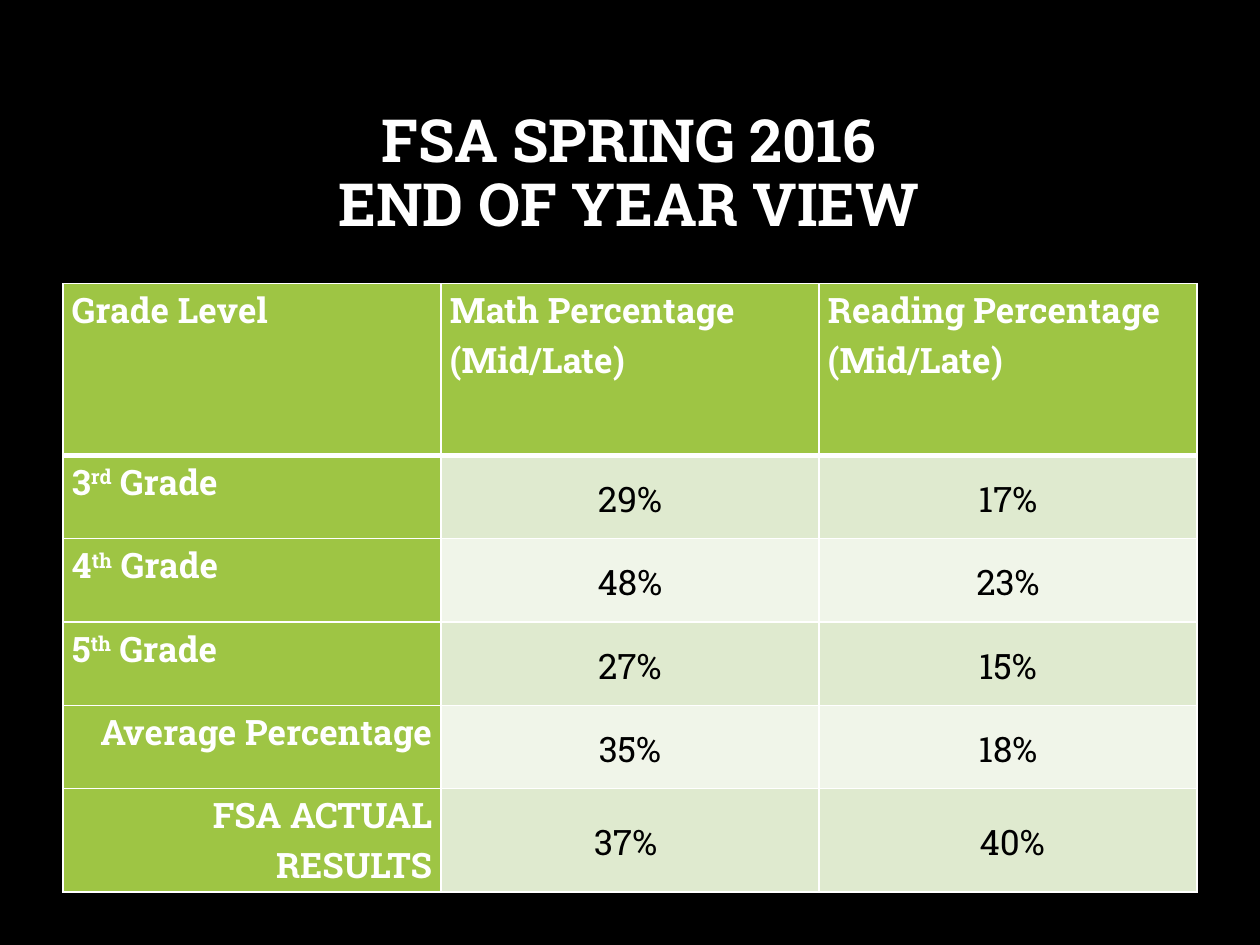
"""Build the FSA end of year results slide."""
from lxml.etree import SubElement
from pptx import Presentation
from pptx.dml.color import RGBColor
from pptx.enum.text import MSO_ANCHOR, MSO_AUTO_SIZE, PP_ALIGN
from pptx.oxml.ns import qn
from pptx.util import Cm, Pt

COLOURS = {
    "background": "000000",
    "label": "9EC544",
    "odd": "DFEACF",
    "even": "F0F5E9",
    "light": "FFFFFF",
    "dark": "000000",
}
FONT = "Roboto Slab"
TITLE_LINES = ["FSA SPRING 2016", "END OF YEAR VIEW"]
HEADERS = ["Grade Level", "Math Percentage (Mid/Late)", "Reading Percentage (Mid/Late)"]
RESULTS = [
    (["3", "rd", " Grade"], PP_ALIGN.LEFT, "29%", "17%"),
    (["4", "th", " Grade"], PP_ALIGN.LEFT, "48%", "23%"),
    (["5", "th", " Grade"], PP_ALIGN.LEFT, "27%", "15%"),
    (["Average Percentage"], PP_ALIGN.RIGHT, "35%", "18%"),
    (["FSA ACTUAL RESULTS"], PP_ALIGN.RIGHT, "37% ", " 40%"),
]
COLUMN_WIDTH = Cm(7.62)
ROW_HEIGHTS = [Cm(3.46)] + [Cm(1.68)] * 4 + [Cm(2.08)]


def colour(name):
    return RGBColor.from_string(COLOURS[name])


def apply(target, values):
    for name, value in values.items():
        setattr(target, name, value)


def add_span(para, text, size, ink, bold, raised=False):
    span = para.add_run()
    span.text = text
    apply(span.font, {"name": FONT, "size": Pt(size), "bold": bold})
    span.font.color.rgb = colour(ink)
    if raised:
        span._r.get_or_add_rPr().set("baseline", "30000")


def add_borders(cell, bottom):
    properties = cell._tc.get_or_add_tcPr()
    for side, width in {"lnL": 1, "lnR": 1, "lnT": 1, "lnB": bottom}.items():
        line = SubElement(properties, qn(f"a:{side}"), w=str(Pt(width)))
        fill = SubElement(line, qn("a:solidFill"))
        SubElement(fill, qn("a:srgbClr"), val=COLOURS["light"])


def fill_cell(cell, parts, fill, align=PP_ALIGN.LEFT, value=False, bottom=1):
    add_borders(cell, bottom)
    cell.fill.solid()
    cell.fill.fore_color.rgb = colour(fill)
    apply(cell, {
        "margin_left": Cm(0.18),
        "margin_right": Cm(0.18),
        "margin_top": 0,
        "margin_bottom": 0,
        "vertical_anchor": MSO_ANCHOR.MIDDLE if value else MSO_ANCHOR.TOP,
    })
    para = cell.text_frame.paragraphs[0]
    apply(para, {"alignment": align, "line_spacing": 1.07})
    for index, part in enumerate(parts):
        add_span(para, part, 20, "dark" if value else "light", not value, index == 1)


def add_title(page):
    box = page.shapes.title
    apply(box, {"left": Cm(1.9), "top": Cm(1.7), "width": Cm(21.56), "height": Cm(3.68)})
    apply(box.text_frame, {
        "word_wrap": True,
        "auto_size": MSO_AUTO_SIZE.NONE,
        "vertical_anchor": MSO_ANCHOR.MIDDLE,
    })
    para = box.text_frame.paragraphs[0]
    apply(para, {"alignment": PP_ALIGN.CENTER, "line_spacing": 0.9})
    for index, line in enumerate(TITLE_LINES):
        if index:
            para.add_line_break()
        add_span(para, line, 34, "light", True)


def add_results(page):
    table = page.shapes.add_table(
        len(ROW_HEIGHTS), len(HEADERS), Cm(1.27), Cm(5.72),
        COLUMN_WIDTH * len(HEADERS), sum(ROW_HEIGHTS),
    ).table
    for row, height in zip(table.rows, ROW_HEIGHTS):
        row.height = height
    for column, header in enumerate(HEADERS):
        table.columns[column].width = COLUMN_WIDTH
        fill_cell(table.cell(0, column), [header], "label", bottom=3)
    for row, (label, align, *values) in enumerate(RESULTS, start=1):
        fill_cell(table.cell(row, 0), label, "label", align)
        band = "odd" if row % 2 else "even"
        for column, value in enumerate(values, start=1):
            fill_cell(table.cell(row, column), [value], band, PP_ALIGN.CENTER, value=True)


def main():
    deck = Presentation()
    apply(deck, {"slide_width": Cm(25.4), "slide_height": Cm(19.05)})
    page = deck.slides.add_slide(deck.slide_layouts[5])
    page.background.fill.solid()
    page.background.fill.fore_color.rgb = colour("background")
    add_title(page)
    add_results(page)
    deck.save("out.pptx")


if __name__ == "__main__":
    main()
